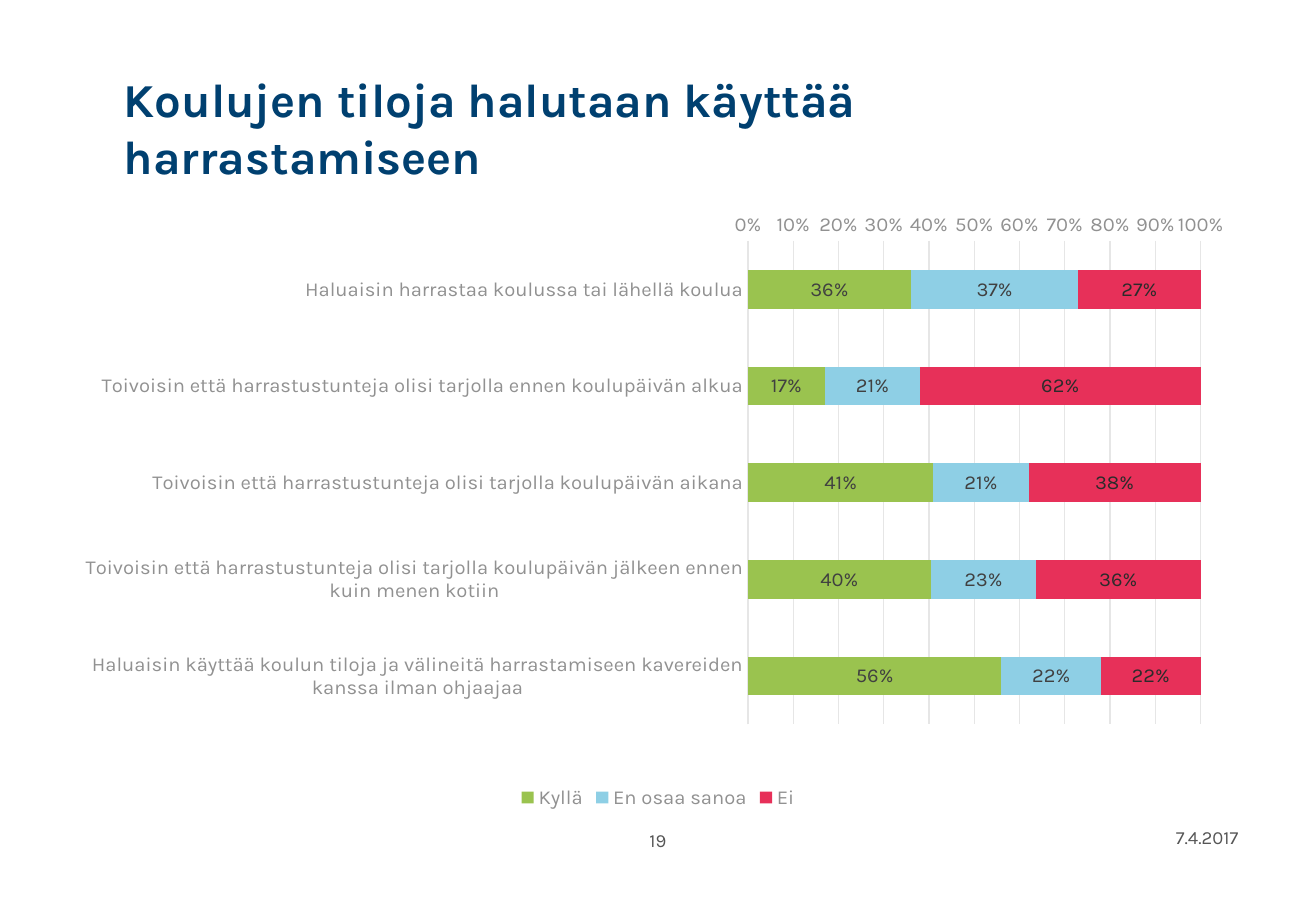
from lxml import etree
from pptx import Presentation
from pptx import util as u
from pptx.chart import data as cd
from pptx.dml import color as col
from pptx.enum import chart as ch, text as t
from pptx.oxml import ns

FONT = "Karla"
GREY, PALE, GRID = "565656", "919191", "E6E6E6"

CATS = [
    "Haluaisin harrastaa koulussa tai lähellä koulua",
    "Toivoisin että harrastustunteja olisi tarjolla ennen koulupäivän alkua",
    "Toivoisin että harrastustunteja olisi tarjolla koulupäivän aikana",
    "Toivoisin että harrastustunteja olisi tarjolla koulupäivän jälkeen ennen kuin menen kotiin",
    "Haluaisin käyttää koulun tiloja ja välineitä harrastamiseen kavereiden kanssa ilman ohjaajaa",
]
# Name, values, fill, label colour
SERIES = [
    ("Kyllä", (0.36, 0.17, 0.41, 0.40, 0.56), "9AC34F", "404040"),
    ("En osaa sanoa", (0.37, 0.21, 0.21, 0.23, 0.22), "8ECFE5", "404040"),
    ("Ei", (0.27, 0.62, 0.38, 0.36, 0.22), "E73059", "2B2B2B"),
]
# Plot area as shares of the chart frame
PLOT = {"x": 0.576, "y": 0.02, "w": 0.382, "h": 0.827}


def rgb(code):
    return col.RGBColor.from_string(code)


def style(font, size, color, bold=False):
    font.name, font.size, font.bold = FONT, u.Pt(size), bold
    font.color.rgb = rgb(color)


def add_text(slide, words, box, size=11, color=GREY, bold=False,
             align=t.PP_ALIGN.LEFT, anchor=t.MSO_ANCHOR.TOP):
    frame = slide.shapes.add_textbox(*map(u.Cm, box)).text_frame
    frame.word_wrap = True
    frame.vertical_anchor = anchor
    para = frame.paragraphs[0]
    para.alignment = align
    run = para.add_run()
    run.text = words
    style(run.font, size, color, bold)


def set_line(line, color):
    line.color.rgb = rgb(color)
    line.width = u.Pt(0.75)


def set_plot(chart):
    """Fix the inner plot area inside the chart frame."""
    area = chart.element.find(".//" + ns.qn("c:plotArea"))
    for old in area.findall(ns.qn("c:layout")):
        area.remove(old)
    layout = etree.Element(ns.qn("c:layout"))
    area.insert(0, layout)
    manual = etree.SubElement(layout, ns.qn("c:manualLayout"))
    rules = {"layoutTarget": "inner", "xMode": "edge", "yMode": "edge", **PLOT}
    for tag, val in rules.items():
        etree.SubElement(manual, ns.qn("c:" + tag)).set("val", str(val))


def set_axes(chart):
    cat, val = chart.category_axis, chart.value_axis
    for axis in (cat, val):
        axis.major_tick_mark = axis.minor_tick_mark = ch.XL_TICK_MARK.NONE
        style(axis.tick_labels.font, 12, PALE)
    # First category on top, value axis at the bottom
    cat.reverse_order = True
    cat.crosses = ch.XL_AXIS_CROSSES.MAXIMUM
    set_line(cat.format.line, GRID)
    val.minimum_scale, val.maximum_scale, val.major_unit = 0, 1, 0.1
    val.has_major_gridlines = True
    set_line(val.major_gridlines.format.line, GRID)
    val.format.line.fill.background()
    val.tick_labels.number_format = "0%"
    val.tick_labels.number_format_is_linked = False


def set_bars(plot):
    plot.gap_width, plot.overlap = 150, 100
    plot.vary_by_categories = False
    for bar, (_, _, fill, ink) in zip(plot.series, SERIES):
        bar.format.fill.solid()
        bar.format.fill.fore_color.rgb = rgb(fill)
        labels = bar.data_labels
        labels.show_value = True
        labels.position = ch.XL_LABEL_POSITION.CENTER
        labels.number_format = "0%"
        labels.number_format_is_linked = False
        style(labels.font, 12, ink)


def add_bars(slide, box):
    data = cd.CategoryChartData(number_format="0%")
    data.categories = CATS
    for name, vals, _, _ in SERIES:
        data.add_series(name, vals)
    chart = slide.shapes.add_chart(
        ch.XL_CHART_TYPE.BAR_STACKED_100, *map(u.Cm, box), data).chart
    style(chart.font, 10, GREY)
    chart.has_title = False
    set_plot(chart)
    set_axes(chart)
    set_bars(chart.plots[0])
    # Legend
    chart.has_legend = True
    chart.legend.position = ch.XL_LEGEND_POSITION.BOTTOM
    chart.legend.include_in_layout = False
    style(chart.legend.font, 12, PALE)


def main():
    deck = Presentation()
    deck.slide_width, deck.slide_height = u.Cm(27.51), u.Cm(19.05)
    slide = deck.slides.add_slide(deck.slide_layouts[6])

    # Title
    add_text(slide, "Koulujen tiloja halutaan käyttää harrastamiseen",
             (2.34, 1.07, 17.78, 3.18), size=28, color="004070", bold=True,
             anchor=t.MSO_ANCHOR.MIDDLE)
    # Chart
    add_bars(slide, (1.37, 4.45, 24.77, 12.57))
    # Page number and date
    add_text(slide, "19", (10.54, 17.2, 6.43, 1.02), align=t.PP_ALIGN.CENTER)
    add_text(slide, "7.4.2017", (19.71, 17.15, 6.43, 1.02),
             align=t.PP_ALIGN.RIGHT)

    deck.save("out.pptx")


if __name__ == "__main__":
    main()
